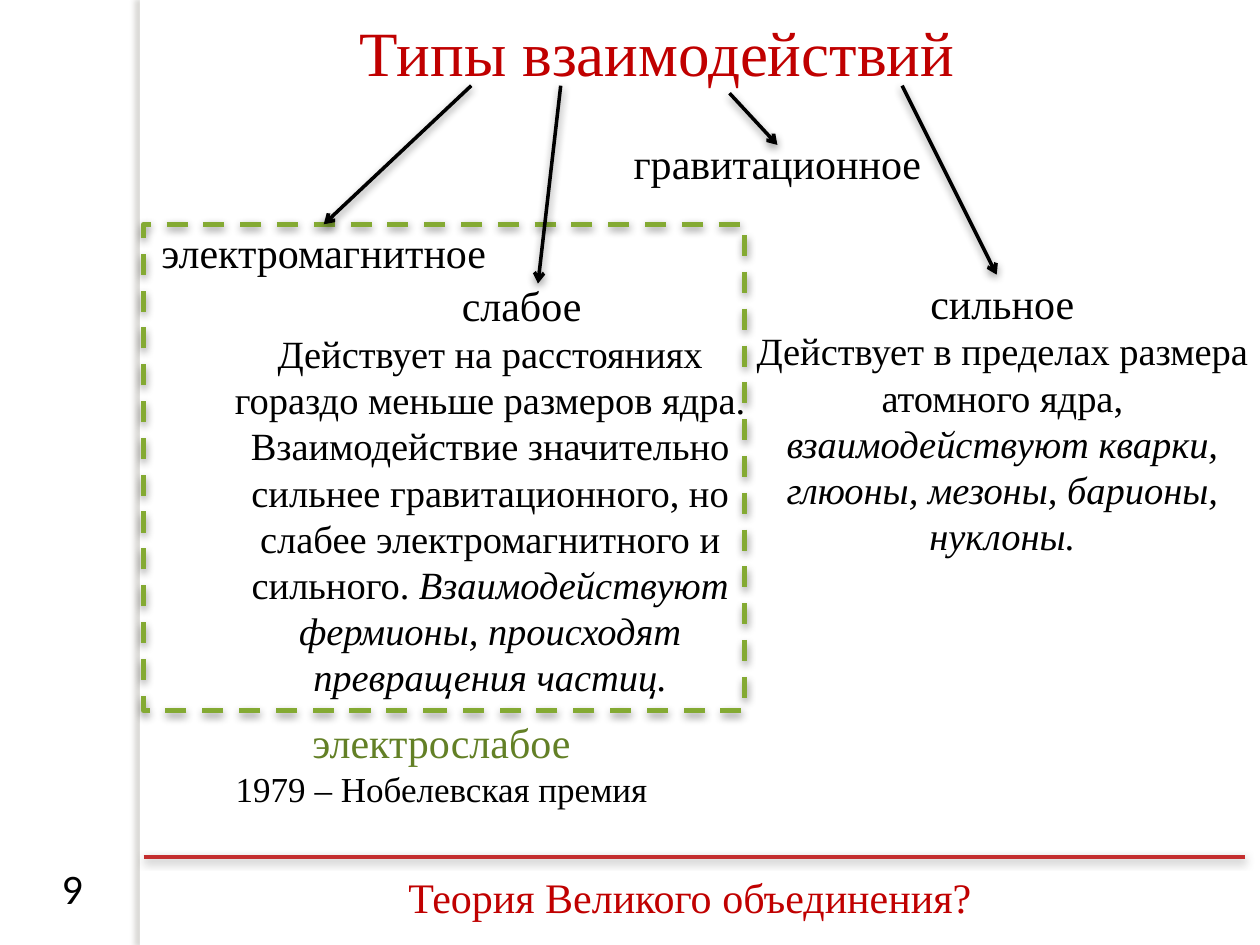
from dataclasses import dataclass

from lxml import etree
from pptx import Presentation
from pptx import util as u
from pptx.dml.color import RGBColor
from pptx.enum import dml, shapes, text
from pptx.oxml import ns


@dataclass(frozen=True)
class Theme:
    serif: str = "Times New Roman"
    sans: str = "Calibri"
    black: str = "000000"
    white: str = "FFFFFF"
    red: str = "C00000"
    rule: str = "C32D2E"
    frame: str = "84AA33"
    green: str = "638026"
    strip_shadow: str = "736F63"
    title: int = 36
    label: int = 24
    body: int = 22
    note: int = 20


THEME = Theme()


def inches(values):
    return [u.Inches(value) for value in values]


def add_shadow(shape, color=THEME.black, alpha=43, blur=5, distance=2, angle=90):
    effects = etree.SubElement(shape._element.spPr, ns.qn("a:effectLst"))
    shadow = etree.SubElement(
        effects, ns.qn("a:outerShdw"), blurRad=str(u.Pt(blur)),
        dist=str(u.Pt(distance)), dir=str(angle * 60000), rotWithShape="0")
    tint = etree.SubElement(shadow, ns.qn("a:srgbClr"), val=color)
    etree.SubElement(tint, ns.qn("a:alpha"), val=str(alpha * 1000))


def set_line(shape, color, width):
    shape.line.color.rgb = RGBColor.from_string(color)
    shape.line.width = u.Pt(width)


def add_strip(slide):
    strip = slide.shapes.add_shape(
        shapes.MSO_SHAPE.RECTANGLE, *inches((1.11, 0, 0.08, 7.5)))
    strip.fill.solid()
    strip.fill.fore_color.rgb = RGBColor.from_string(THEME.white)
    strip.line.fill.background()
    add_shadow(strip, THEME.strip_shadow, 25, 3, 3, 180)


def add_frame(slide):
    frame = slide.shapes.add_shape(
        shapes.MSO_SHAPE.RECTANGLE, *inches((1.14, 1.78, 4.77, 3.86)))
    frame.fill.background()
    set_line(frame, THEME.frame, 3)
    frame.line.dash_style = dml.MSO_LINE.DASH
    add_shadow(frame)


def add_line(slide, start, end, color=THEME.black, arrow=True):
    line = slide.shapes.add_connector(
        shapes.MSO_CONNECTOR.STRAIGHT, *inches(start + end))
    set_line(line, color, 2)
    if arrow:
        etree.SubElement(line.line._get_or_add_ln(), ns.qn("a:tailEnd"), type="arrow")
    add_shadow(line)


def run(wording, size=THEME.label, color=THEME.black, italic=None, name=THEME.serif):
    return wording, color, {"size": u.Pt(size), "italic": italic, "name": name}


def add_text(slide, place, *paragraphs, align=text.PP_ALIGN.CENTER,
             wrap=True, anchor=text.MSO_ANCHOR.TOP):
    box = slide.shapes.add_textbox(*inches(place))
    frame = box.text_frame
    frame_format = {"word_wrap": wrap, "vertical_anchor": anchor}
    for attribute, value in frame_format.items():
        setattr(frame, attribute, value)
    for index, runs in enumerate(paragraphs):
        paragraph = frame.add_paragraph() if index else frame.paragraphs[0]
        paragraph.alignment = align
        for wording, color, font_format in runs:
            piece = paragraph.add_run()
            piece.text = wording
            piece.font.color.rgb = RGBColor.from_string(color)
            for attribute, value in font_format.items():
                setattr(piece.font, attribute, value)
    return box


def add_interactions(slide):
    add_text(slide, (1.09, 1.75, 2.96, 0.5), [run("электромагнитное")])
    add_text(slide, (4.69, 1.04, 2.96, 0.5), [run("гравитационное")])
    weak = add_text(
        slide, (1.75, 2.17, 4.28, 3.47), [run("слабое")],
        [run("Действует на расстояниях гораздо меньше размеров ядра. "
             "Взаимодействие значительно сильнее гравитационного, но слабее "
             "электромагнитного и сильного. ", THEME.body),
         run("Взаимодействуют фермионы, происходят превращения частиц.",
             THEME.body, italic=True)])
    weak_heading = weak.text_frame.paragraphs[0]._p.get_or_add_pPr()
    weak_heading.set("marL", str(u.Inches(0.5)))
    add_text(
        slide, (5.79, 2.15, 4.33, 2.36), [run("сильное")],
        [run("Действует в пределах размера атомного ядра, ", THEME.body),
         run("взаимодействуют кварки, глюоны, мезоны, барионы, нуклоны.",
             THEME.body, italic=True)])
    add_text(
        slide, (1.38, 5.64, 4.25, 0.84),
        [run("электрослабое", color=THEME.green)],
        [run("1979 – Нобелевская премия", THEME.note)])


def main():
    deck = Presentation()
    deck.slide_width, deck.slide_height = inches((10, 7.5))
    slide = deck.slides.add_slide(deck.slide_layouts[6])
    add_strip(slide)
    add_frame(slide)
    add_text(slide, (1.03, 0.03, 8.5, 0.75),
             [run("Типы взаимодействий ", THEME.title, THEME.red)],
             anchor=text.MSO_ANCHOR.MIDDLE)
    add_text(slide, (0.39, 6.8, 0.38, 0.5), [run("9", name=THEME.sans)],
             align=text.PP_ALIGN.LEFT, wrap=False)
    add_interactions(slide)
    arrows = [
        ((3.74, 0.68), (2.57, 1.78)),
        ((4.45, 0.68), (4.27, 2.25)),
        ((5.79, 0.74), (6.17, 1.15)),
        ((7.16, 0.68), (7.91, 2.18)),
    ]
    for start, end in arrows:
        add_line(slide, start, end)
    add_line(slide, (1.14, 6.8), (9.88, 6.8), THEME.rule, arrow=False)
    add_text(slide, (2.09, 6.87, 6.77, 0.5),
             [run("Теория Великого объединения?", color=THEME.red)])
    deck.save("out.pptx")


if __name__ == "__main__":
    main()
